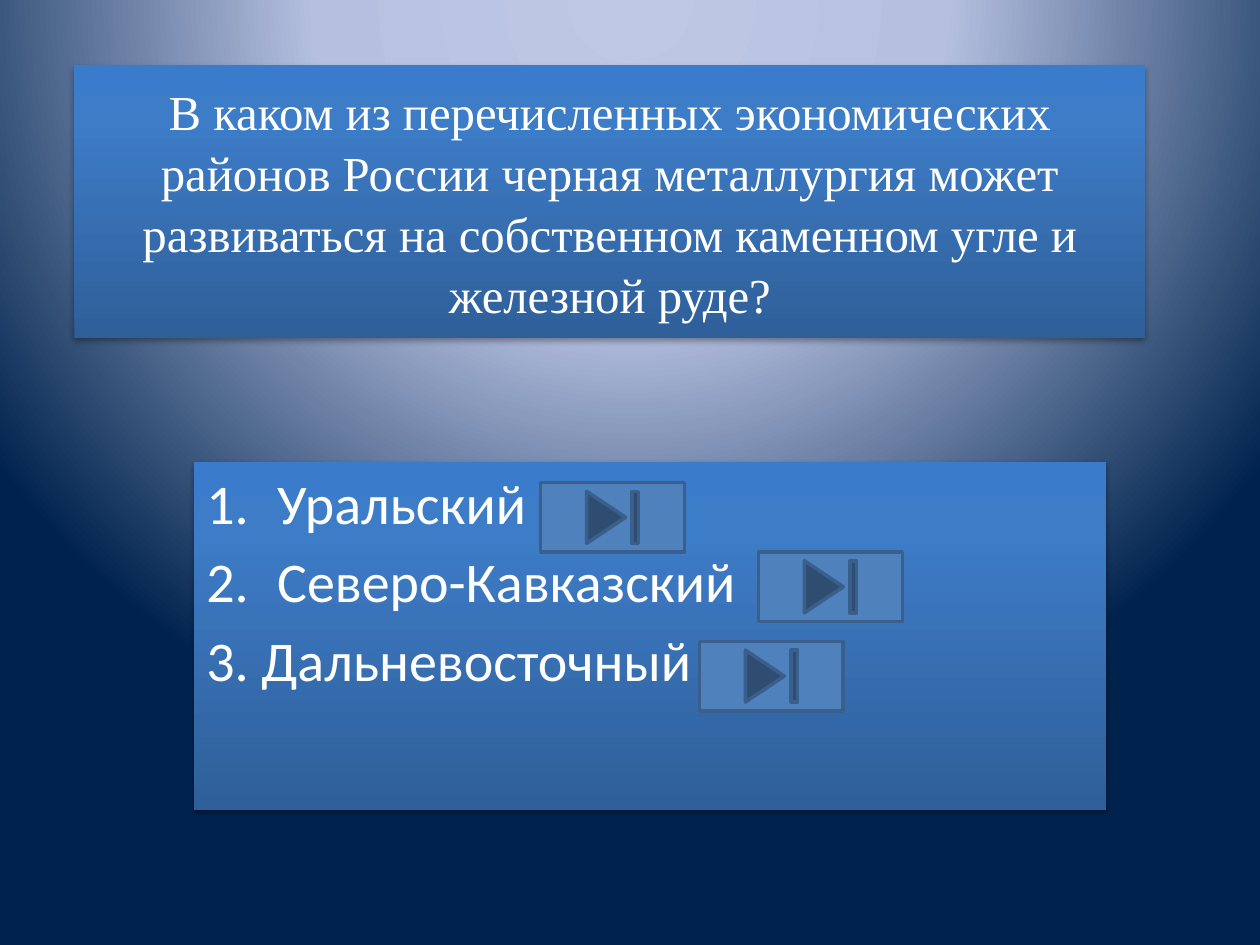
from lxml import etree
from pptx import Presentation
from pptx.dml.color import RGBColor
from pptx.enum.shapes import MSO_SHAPE
from pptx.enum.text import MSO_ANCHOR, PP_ALIGN
from pptx.oxml import parse_xml
from pptx.oxml.ns import qn
from pptx.util import Cm, Pt

RECTANGLE, END_BUTTON = MSO_SHAPE.RECTANGLE, MSO_SHAPE.ACTION_BUTTON_END
LEFT, CENTER = PP_ALIGN.LEFT, PP_ALIGN.CENTER
TOP, MIDDLE = MSO_ANCHOR.TOP, MSO_ANCHOR.MIDDLE
NS = 'xmlns:a="http://schemas.openxmlformats.org/drawingml/2006/main"'

QUESTION = (
    "В каком из перечисленных экономических районов России черная металлургия "
    "может развиваться на собственном каменном угле и железной руде?"
)
QUESTION_BOX = (1.5, 1.32, 21.59, 5.49)
ANSWERS = [("Уральский", True), ("Северо-Кавказский", True), ("3. Дальневосточный", False)]
ANSWERS_BOX = (3.91, 9.32, 18.39, 7.01)
BUTTON_CORNERS = [(14.1, 12.93), (15.29, 11.13), (10.9, 9.73)]
BUTTON_SIZE = (2.9, 1.4)
NUMBER_INDENT = Cm(1.43)

BACKDROP_STOPS = [(0, "BFC9E5"), (40, "B5C0E0"), (100, "00234D")]
PANEL_STOPS = [(0, "2F5F99"), (80, "3D7CC7"), (100, "3A7CCB")]
GLOW = ('<a:path path="circle">'
        '<a:fillToRect l="50000" t="-80000" r="50000" b="180000"/></a:path>')
UPWARD = '<a:lin ang="16200000" scaled="0"/>'


def color(value):
    return RGBColor.from_string(value)


def apply_gradient(fill, properties, stops, direction):
    fill.solid()
    solid = properties.find(qn("a:solidFill"))
    marks = "".join(
        f'<a:gs pos="{position * 1000}"><a:srgbClr val="{value}"/></a:gs>'
        for position, value in stops
    )
    gradient = parse_xml(
        f'<a:gradFill {NS} rotWithShape="1"><a:gsLst>{marks}</a:gsLst>{direction}</a:gradFill>'
    )
    properties.replace(solid, gradient)


def add_panel(slide, box, anchor):
    panel = slide.shapes.add_shape(RECTANGLE, *map(Cm, box))
    properties = panel._element.spPr
    apply_gradient(panel.fill, properties, PANEL_STOPS, UPWARD)
    panel.line.fill.background()
    panel.shadow.inherit = False
    properties.find(qn("a:effectLst")).append(parse_xml(
        f'<a:outerShdw {NS} blurRad="40000" dist="23000" dir="5400000" rotWithShape="0">'
        '<a:srgbClr val="000000"><a:alpha val="35000"/></a:srgbClr></a:outerShdw>'
    ))
    panel.text_frame.word_wrap = True
    panel.text_frame.vertical_anchor = anchor
    return panel.text_frame


def write(paragraph, text, font, size, align=LEFT, before=0, spacing=1.0, numbered=False):
    paragraph.alignment = align
    paragraph.space_before = Pt(before)
    paragraph.line_spacing = spacing
    if numbered:
        properties = paragraph._p.get_or_add_pPr()
        properties.set("marL", str(NUMBER_INDENT))
        properties.set("indent", str(-NUMBER_INDENT))
        etree.SubElement(properties, qn("a:buFont"), typeface="+mj-lt")
        etree.SubElement(properties, qn("a:buAutoNum"), type="arabicPeriod")
    run = paragraph.add_run()
    run.text = text
    run.font.name = font
    run.font.size = Pt(size)
    run.font.color.rgb = color("FFFFFF")


def add_button(slide, corner):
    button = slide.shapes.add_shape(END_BUTTON, *map(Cm, corner + BUTTON_SIZE))
    button.shadow.inherit = False
    button.fill.solid()
    button.fill.fore_color.rgb = color("4F81BD")
    button.line.color.rgb = color("3A5F8C")
    button.line.width = Pt(2)


def main():
    deck = Presentation()
    deck.slide_width, deck.slide_height = Cm(25.4), Cm(19.05)
    slide = deck.slides.add_slide(deck.slide_layouts[6])

    backdrop = slide.background.fill
    backdrop.solid()
    backdrop_properties = slide._element.cSld.bg.bgPr
    apply_gradient(backdrop, backdrop_properties, BACKDROP_STOPS, GLOW)

    question = add_panel(slide, QUESTION_BOX, MIDDLE)
    write(question.paragraphs[0], QUESTION, "Times New Roman", 27.9, align=CENTER, spacing=1.04)

    answers = add_panel(slide, ANSWERS_BOX, TOP)
    for index, (answer, numbered) in enumerate(ANSWERS):
        paragraph = answers.add_paragraph() if index else answers.paragraphs[0]
        write(paragraph, answer, "Calibri", 32, before=6.4, numbered=numbered)

    for corner in BUTTON_CORNERS:
        add_button(slide, corner)

    deck.save("out.pptx")


if __name__ == "__main__":
    main()
